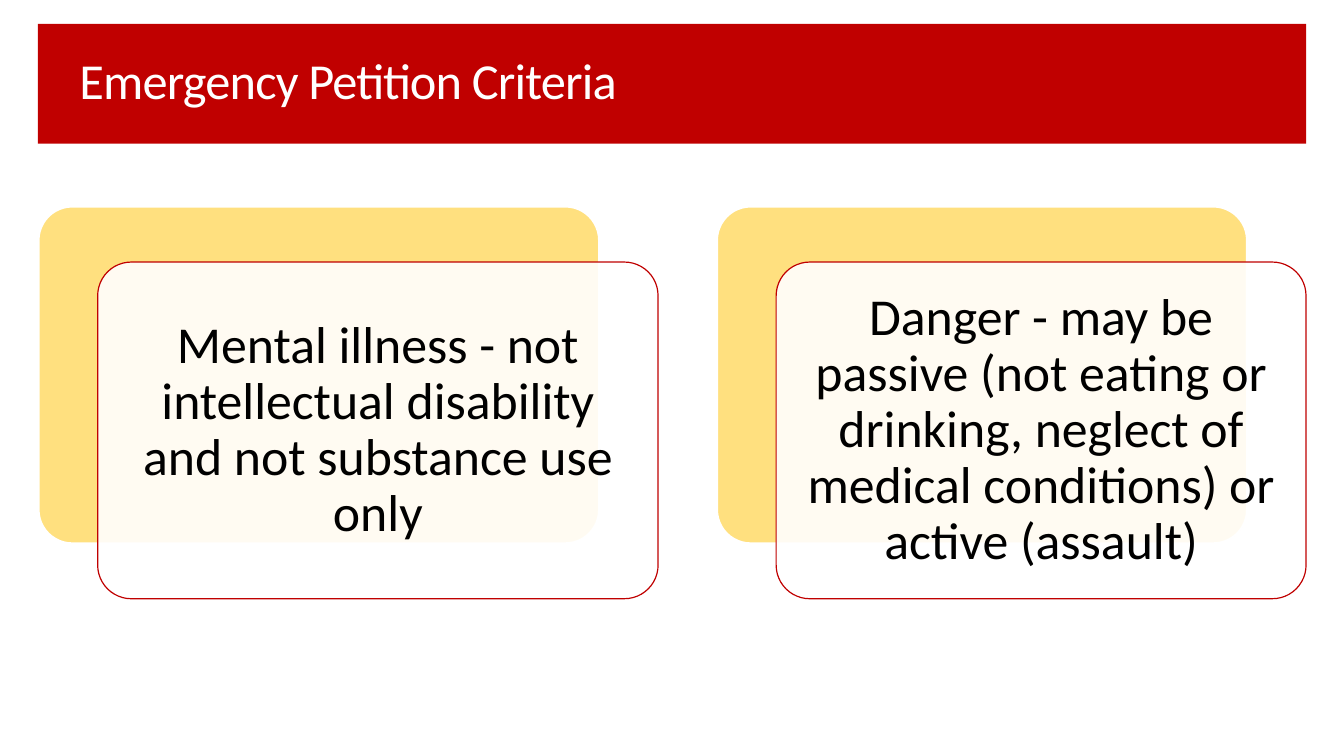
"""Build the Emergency Petition Criteria slide."""
from lxml import etree
from pptx import Presentation
from pptx.dml.color import RGBColor
from pptx.enum.shapes import MSO_SHAPE
from pptx.enum.text import MSO_ANCHOR, PP_ALIGN
from pptx.oxml.ns import qn
from pptx.util import Pt

RECTANGLE = MSO_SHAPE.RECTANGLE
ROUNDED = MSO_SHAPE.ROUNDED_RECTANGLE
MIDDLE = MSO_ANCHOR.MIDDLE
CENTER = PP_ALIGN.CENTER


def color(hex_value):
    return RGBColor.from_string(hex_value)


def add_panel(kind, left, top, width, height, fill):
    panel = slide.shapes.add_shape(kind, Pt(left), Pt(top), Pt(width), Pt(height))
    panel.shadow.inherit = False
    panel.fill.solid()
    panel.fill.fore_color.rgb = color(fill)
    return panel


prs = Presentation()
prs.slide_width, prs.slide_height = Pt(960), Pt(540)
slide = prs.slides.add_slide(prs.slide_layouts[6])

banner = add_panel(RECTANGLE, 27, 17, 906, 85.7, "C00000")
banner.line.fill.background()

title = slide.shapes.add_textbox(Pt(49.7), Pt(23.8), Pt(831), Pt(71.3))
title.text_frame.word_wrap = True
title.text_frame.vertical_anchor = MIDDLE
heading = title.text_frame.paragraphs[0]
heading.text = "Emergency Petition Criteria"
heading.line_spacing = 0.9
heading_run = heading.runs[0]
heading_run.font.name = "Calibri"
heading_run.font.size = Pt(36)
heading_run.font.color.rgb = color("FFFFFF")
heading_run.font._element.set("spc", "-60")

criteria = [
    (27.6, 400.3, "Mental illness - not intellectual disability and not substance use only"),
    (512.2, 378.5, "Danger - may be passive (not eating or drinking, neglect of "
                   "medical conditions) or active (assault)"),
]
card_top, card_height = 147.6, 240.5
offset_x, offset_y = 42.2, 39.6

for left, width, wording in criteria:
    backing = add_panel(ROUNDED, left, card_top, width, card_height, "FFE07F")
    backing.line.color.rgb = color("FFFFFF")
    backing.line.width = Pt(1.35)

    card = add_panel(ROUNDED, left + offset_x, card_top + offset_y, width, card_height, "FFFFFF")
    card.line.color.rgb = color("C00000")
    card.line.width = Pt(0.85)
    card_fill = card._element.spPr.find(qn("a:solidFill")).find(qn("a:srgbClr"))
    etree.SubElement(card_fill, qn("a:alpha")).set("val", "90000")
    for rounded in (backing, card):
        rounded.adjustments[0] = 0.1

    frame = card.text_frame
    frame.word_wrap = True
    frame.vertical_anchor = MIDDLE
    frame.margin_left = frame.margin_right = Pt(10.8)
    frame.margin_top = frame.margin_bottom = Pt(10.8)
    criterion = frame.paragraphs[0]
    criterion.text = wording
    criterion.alignment = CENTER
    criterion.line_spacing = 0.9
    criterion.font.name = "Calibri"
    criterion.font.size = Pt(37)
    criterion.font.color.rgb = color("000000")

prs.save("out.pptx")
